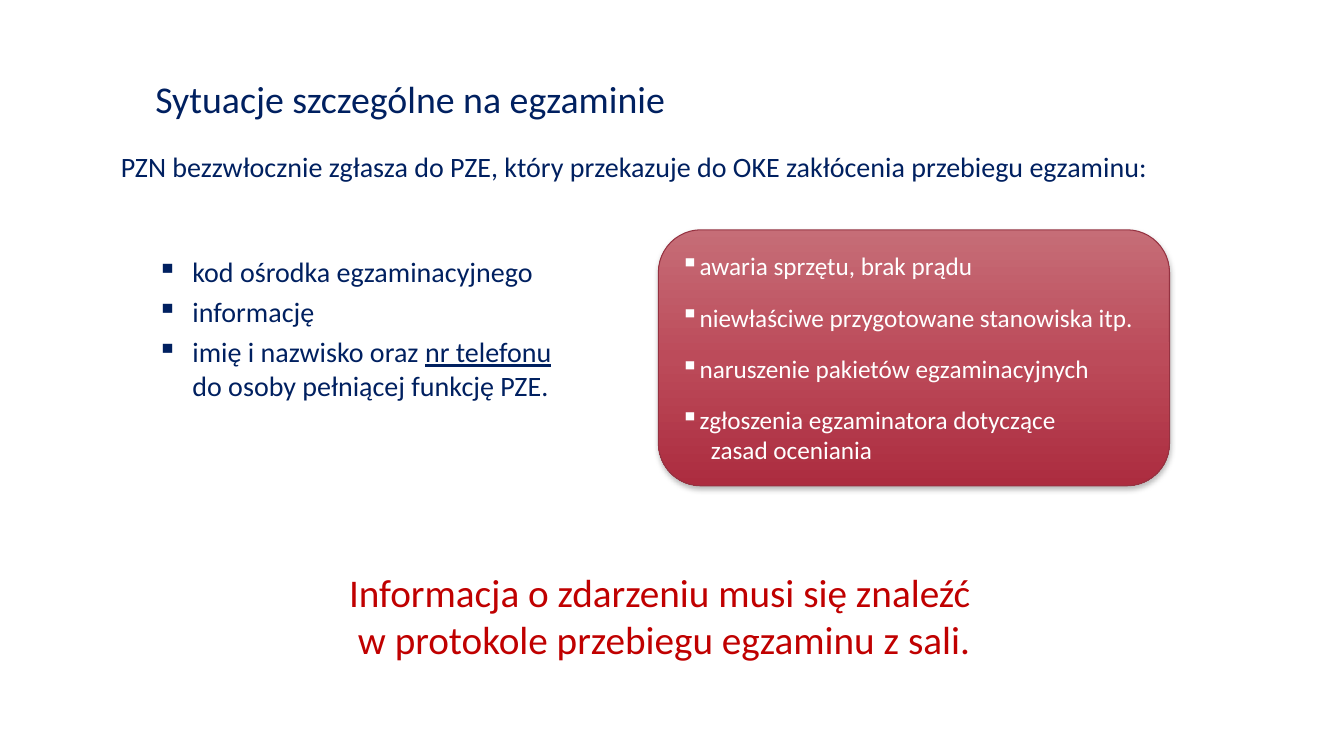
from dataclasses import dataclass

from lxml import etree
from pptx import Presentation
from pptx import oxml
from pptx import util as u
from pptx.dml.color import RGBColor
from pptx.enum import shapes, text
from pptx.oxml.ns import nsdecls, qn

# Content
TITLE = "Sytuacje szczególne na egzaminie"
INTRO = "PZN bezzwłocznie zgłasza do PZE, który przekazuje do OKE zakłócenia przebiegu egzaminu:"
REPORT_ITEMS = [
    [("kod ośrodka egzaminacyjnego", False)],
    [("informację", False)],
    [("imię i nazwisko oraz ", False), ("nr telefonu ", True),
     ("do osoby pełniącej funkcję PZE.", False)],
]
INCIDENTS = [
    [("awaria sprzętu, brak prądu", False)],
    [("niewłaściwe przygotowane stanowiska itp.", False)],
    [("naruszenie pakietów egzaminacyjnych", False)],
    [("zgłoszenia egzaminatora dotyczące \v\tzasad oceniania", False)],
]
CONCLUSION = "Informacja o zdarzeniu musi się znaleźć \vw protokole przebiegu egzaminu z sali."


@dataclass(frozen=True)
class Theme:
    font: str = "Calibri"
    navy: str = "002060"
    red: str = "C00000"
    white: str = "FFFFFF"
    panel_line: str = "953241"
    panel_stops: tuple = ((0, "C66D77"), (50, "BC4B5A"), (100, "AC2C3F"))
    title_size: float = 27
    body_size: float = 20
    panel_size: float = 18
    conclusion_size: float = 28


THEME = Theme()


def place(shape, left, top, width, height):
    shape.left, shape.top = u.Inches(left), u.Inches(top)
    shape.width, shape.height = u.Inches(width), u.Inches(height)


def add_box(slide, left, top, width, height):
    box = slide.shapes.add_textbox(*map(u.Inches, (left, top, width, height)))
    box.text_frame.word_wrap = True
    return box


def fill_white(shape):
    shape.fill.solid()
    shape.fill.fore_color.rgb = RGBColor.from_string(THEME.white)


def style(paragraph, size, color, align=text.PP_ALIGN.LEFT):
    paragraph.alignment = align
    paragraph.font.name = THEME.font
    paragraph.font.size = u.Pt(size)
    paragraph.font.color.rgb = RGBColor.from_string(color)


def add_bullets(frame, items, size, color, margin, indent, before, after=0, level=0, tab=None):
    for index, runs in enumerate(items):
        paragraph = frame.paragraphs[0] if index == 0 else frame.add_paragraph()
        for content, underlined in runs:
            if "\v" in content:
                first, second = content.split("\v")
                paragraph.add_run().text = first
                paragraph.add_line_break()
                content = second
            run = paragraph.add_run()
            run.text = content
            if underlined:
                run.font.underline = True
        paragraph.level = level
        properties = paragraph._p.get_or_add_pPr()
        properties.set("marL", str(u.Inches(margin)))
        properties.set("indent", str(u.Inches(indent)))
        bullet_color = etree.SubElement(properties, qn("a:buClr"))
        etree.SubElement(bullet_color, qn("a:srgbClr"), val=color)
        etree.SubElement(properties, qn("a:buChar"), char="▪")
        if tab:
            tabs = etree.SubElement(properties, qn("a:tabLst"))
            etree.SubElement(tabs, qn("a:tab"), pos=str(u.Inches(tab)), algn="l")
        paragraph.space_before = u.Pt(before if index else 0)
        paragraph.space_after = u.Pt(after)
        style(paragraph, size, color)


def style_panel(panel):
    panel.line.color.rgb = RGBColor.from_string(THEME.panel_line)
    panel.line.width = u.Pt(0.75)
    stops = "".join(f'<a:gs pos="{position * 1000}"><a:srgbClr val="{color}"/></a:gs>'
                    for position, color in THEME.panel_stops)
    gradient = oxml.parse_xml(
        f'<a:gradFill {nsdecls("a")} rotWithShape="1"><a:gsLst>{stops}</a:gsLst>'
        '<a:lin ang="5400000" scaled="0"/></a:gradFill>')
    shadow = oxml.parse_xml(
        f'<a:effectLst {nsdecls("a")}><a:outerShdw blurRad="{u.Pt(4)}" dist="{u.Pt(2)}" '
        'dir="5400000" rotWithShape="0"><a:srgbClr val="000000"><a:alpha val="28000"/>'
        '</a:srgbClr></a:outerShdw></a:effectLst>')
    properties = panel._element.spPr
    properties.find(qn("a:prstGeom")).addnext(gradient)
    properties.find(qn("a:ln")).addnext(shadow)


def main():
    presentation = Presentation()
    presentation.slide_width, presentation.slide_height = u.Inches(13.33), u.Inches(7.5)
    slide = presentation.slides.add_slide(presentation.slide_layouts[5])

    # Title
    title = slide.shapes.title
    place(title, 1.37, 0.58, 8.21, 0.85)
    fill_white(title)
    frame = title.text_frame
    frame.text = TITLE
    frame.word_wrap = True
    frame.auto_size = text.MSO_AUTO_SIZE.NONE
    frame.vertical_anchor = text.MSO_ANCHOR.MIDDLE
    frame.margin_left = u.Inches(0.17)
    frame.margin_right = frame.margin_top = frame.margin_bottom = 0
    frame.paragraphs[0].line_spacing = 0.9
    style(frame.paragraphs[0], THEME.title_size, THEME.navy)

    # Introduction
    intro = add_box(slide, 1.1, 1.43, 10.64, 4.44)
    fill_white(intro)
    intro.text_frame.text = INTRO
    style(intro.text_frame.paragraphs[0], THEME.body_size, THEME.navy)

    # What to report
    report = add_box(slide, 1.1, 2.48, 4.71, 1.59)
    add_bullets(report.text_frame, REPORT_ITEMS, THEME.body_size, THEME.navy,
                margin=0.71, indent=-0.35, before=4.5, level=1)

    # Conclusion
    conclusion = add_box(slide, 2.02, 5.59, 9.13, 1.04)
    fill_white(conclusion)
    conclusion.text_frame.text = CONCLUSION
    style(conclusion.text_frame.paragraphs[0], THEME.conclusion_size, THEME.red,
          text.PP_ALIGN.CENTER)

    # Incident panel
    panel = slide.shapes.add_shape(shapes.MSO_SHAPE.ROUNDED_RECTANGLE,
                                   *map(u.Inches, (6.53, 2.28, 5.07, 2.54)))
    style_panel(panel)
    panel.text_frame.word_wrap = True
    panel.text_frame.vertical_anchor = text.MSO_ANCHOR.MIDDLE
    add_bullets(panel.text_frame, INCIDENTS, THEME.panel_size, THEME.white,
                margin=0.07, indent=-0.3, before=13.5, after=1.5, tab=0.3)

    presentation.save("out.pptx")


if __name__ == "__main__":
    main()
